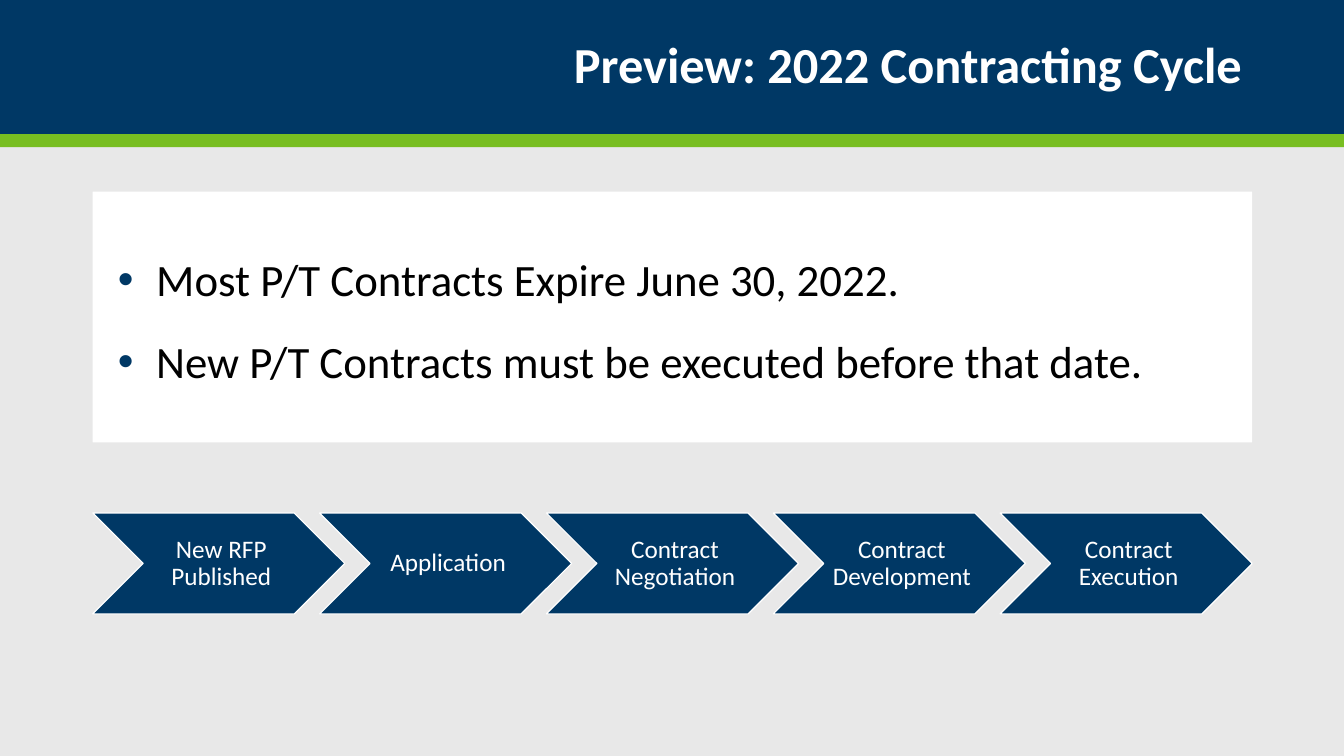
from lxml import etree
from pptx import Presentation
from pptx.dml.color import RGBColor
from pptx.enum import shapes, text
from pptx.oxml import ns
from pptx.util import Inches, Pt

NAVY = RGBColor(0x00, 0x38, 0x65)
GREEN = RGBColor(0x78, 0xBE, 0x21)
GREY = RGBColor(0xE8, 0xE8, 0xE8)
WHITE = RGBColor(0xFF, 0xFF, 0xFF)
BLACK = RGBColor(0x00, 0x00, 0x00)

WIDE, HIGH = 13.33, 7.5
LEFT, SPAN = 0.92, 11.5
TITLE = "Preview: 2022 Contracting Cycle"
POINTS = [
    "Most P/T Contracts Expire June 30, 2022.",
    "New P/T Contracts must be executed before that date.",
]
STEPS = [
    "New RFP Published",
    "Application",
    "Contract Negotiation",
    "Contract Development",
    "Contract Execution",
]


def add_block(slide, kind, box, fill):
    block = slide.shapes.add_shape(kind, *map(Inches, box))
    block.shadow.inherit = False
    block.fill.solid()
    block.fill.fore_color.rgb = fill
    block.line.fill.background()
    return block


def set_frame(frame, insets, anchor):
    """Wrap the text, with insets given as left, top, right, bottom."""
    frame.word_wrap = True
    frame.vertical_anchor = anchor
    (frame.margin_left, frame.margin_top,
     frame.margin_right, frame.margin_bottom) = map(Inches, insets)


def set_par(par, words, size, color, align, bold=False):
    par.text = words
    par.alignment = align
    font = par.font
    font.name, font.size, font.bold = "Calibri", Pt(size), bold
    font.color.rgb = color


def add_bullet(par, indent, color):
    props = par._p.get_or_add_pPr()
    props.set("marL", str(Inches(indent)))
    props.set("indent", str(-Inches(indent)))
    tint = etree.Element(ns.qn("a:buClr"))
    etree.SubElement(tint, ns.qn("a:srgbClr"), val=str(color))
    face = etree.Element(ns.qn("a:buFont"), typeface="Arial")
    mark = etree.Element(ns.qn("a:buChar"), char="•")
    spot = props.find(ns.qn("a:defRPr"))
    for part in (tint, face, mark):
        spot.addprevious(part)


def add_header(slide, box):
    left, top, width, height = box
    rect = shapes.MSO_SHAPE.RECTANGLE
    add_block(slide, rect, box, NAVY)
    add_block(slide, rect, (left, top + height, width, 0.13), GREEN)
    area = (left + LEFT, top + 0.17, SPAN, 1)
    frame = slide.shapes.add_textbox(*map(Inches, area)).text_frame
    set_frame(frame, (0.1, 0.05, 0.1, 0.05), text.MSO_ANCHOR.MIDDLE)
    par = frame.paragraphs[0]
    set_par(par, TITLE, 36, WHITE, text.PP_ALIGN.RIGHT, bold=True)
    par.line_spacing = 0.9


def add_points(slide, box):
    panel = add_block(slide, shapes.MSO_SHAPE.RECTANGLE, box, WHITE)
    frame = panel.text_frame
    set_frame(frame, (0.25, 0.6, 0.3, 0.05), text.MSO_ANCHOR.TOP)
    for i, words in enumerate(POINTS):
        par = frame.add_paragraph() if i else frame.paragraphs[0]
        set_par(par, words, 32, BLACK, text.PP_ALIGN.LEFT)
        par.space_before = par.space_after = Pt(10)
        add_bullet(par, 0.38, NAVY)


def add_steps(slide, box):
    """Spread the chevrons over the box, each 2.5 times as wide as high."""
    left, top, width, height = box
    wide = 2.5 * height
    pitch = (width - wide) / (len(STEPS) - 1)
    for i, words in enumerate(STEPS):
        area = (left + i * pitch, top, wide, height)
        step = add_block(slide, shapes.MSO_SHAPE.CHEVRON, area, NAVY)
        step.line.color.rgb = WHITE
        step.line.width = Pt(0.85)
        frame = step.text_frame
        set_frame(frame, (0.08, 0.03, 0.03, 0.03), text.MSO_ANCHOR.MIDDLE)
        par = frame.paragraphs[0]
        set_par(par, words, 18, WHITE, text.PP_ALIGN.CENTER)
        par.line_spacing = 0.9


def main():
    deck = Presentation()
    deck.slide_width, deck.slide_height = Inches(WIDE), Inches(HIGH)
    slide = deck.slides.add_slide(deck.slide_layouts[6])
    slide.background.fill.solid()
    slide.background.fill.fore_color.rgb = GREY
    add_header(slide, (0, 0, WIDE, 1.33))
    add_points(slide, (LEFT, 1.9, SPAN, 2.49))
    add_steps(slide, (LEFT, 5.09, SPAN, 1))
    deck.save("out.pptx")


if __name__ == "__main__":
    main()
